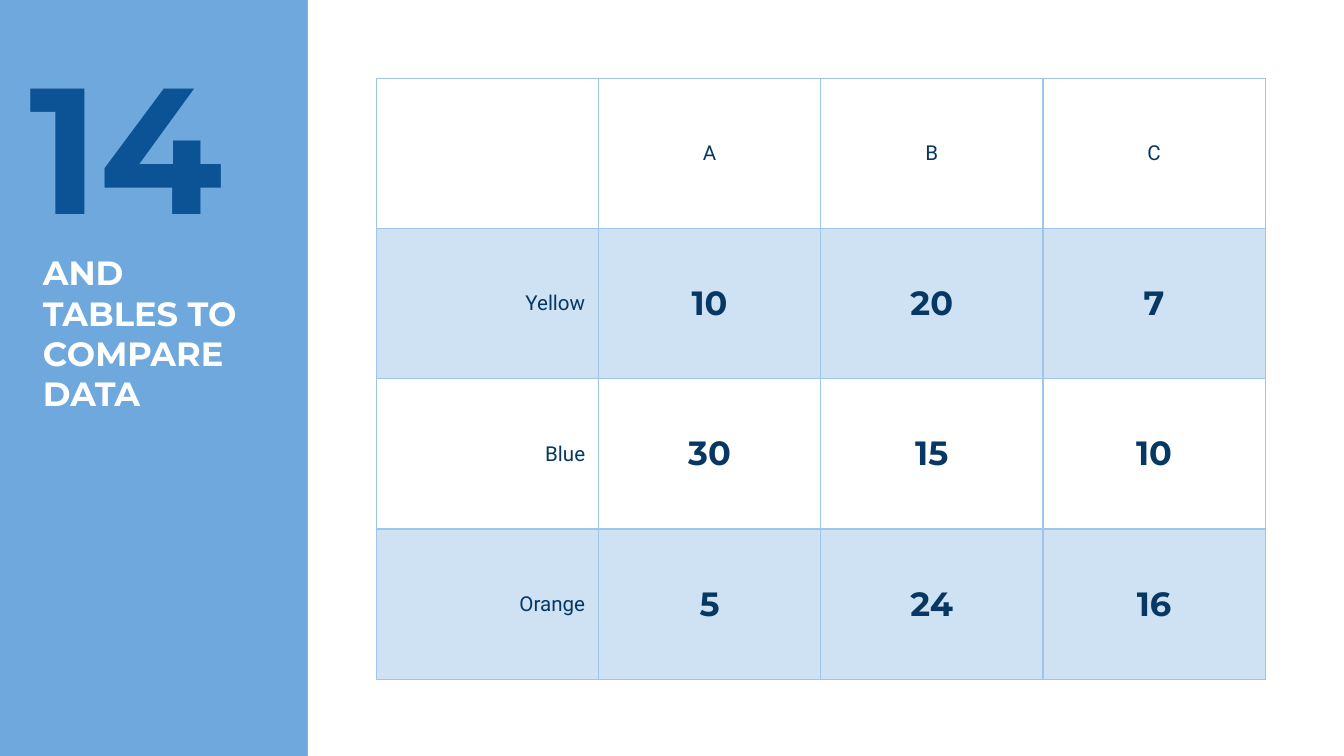
"""Build a slide with a sidebar heading and a table that compares data."""
from lxml.etree import SubElement
from pptx import Presentation
from pptx.dml.color import RGBColor
from pptx.enum.shapes import MSO_SHAPE as Shape
from pptx.enum.text import MSO_ANCHOR as Anchor, MSO_AUTO_SIZE as AutoSize, PP_ALIGN as Align
from pptx.oxml.ns import qn
from pptx.util import Cm, Pt

SKY = RGBColor(0x6F, 0xA8, 0xDC)
WHITE = RGBColor(0xFF, 0xFF, 0xFF)
NAVY = RGBColor(0x07, 0x37, 0x63)
COBALT = RGBColor(0x0B, 0x53, 0x94)
PALE = RGBColor(0xCF, 0xE2, 0xF3)
BORDER = RGBColor(0x9F, 0xC5, 0xE8)

COMPARISON = [
    ["", "A", "B", "C"],
    ["Yellow", "10", "20", "7"],
    ["Blue", "30", "15", "10"],
    ["Orange", "5", "24", "16"],
]


def write_text(frame, text, *, font="Montserrat", size=18, color=NAVY, bold=True, align=Align.LEFT):
    paragraph = frame.paragraphs[0]
    paragraph.alignment = align
    paragraph.line_spacing = 1.0
    run = paragraph.add_run()
    run.text = text
    run.font.name = font
    run.font.size = Pt(size)
    run.font.bold = bold
    run.font.color.rgb = color


class SlideBuilder:
    heading_font = "Montserrat"
    label_font = "Roboto"
    inset = Cm(0.25)
    cell_inset = Cm(0.18)
    border_width = Pt(0.75)

    def __init__(self, slide):
        self.slide = slide

    def background(self, color):
        fill = self.slide.background.fill
        fill.solid()
        fill.fore_color.rgb = color

    def panel(self, left, top, width, height, color):
        panel = self.slide.shapes.add_shape(Shape.RECTANGLE, left, top, width, height)
        panel.shadow.inherit = False
        panel.fill.solid()
        panel.fill.fore_color.rgb = color
        panel.line.fill.background()

    def frame(self, holder, text, **text_format):
        frame = holder.text_frame
        frame.word_wrap = True
        frame.auto_size = AutoSize.NONE
        frame.vertical_anchor = Anchor.TOP
        frame.margin_left = frame.margin_right = self.inset
        frame.margin_top = frame.margin_bottom = self.inset
        write_text(frame, text, font=self.heading_font, **text_format)

    def title(self, text, left, top, width, height, **text_format):
        title = self.slide.shapes.title
        title.left, title.top, title.width, title.height = left, top, width, height
        self.frame(title, text, **text_format)

    def big_number(self, text, left, top, width, height, **text_format):
        self.frame(self.slide.shapes.add_textbox(left, top, width, height), text, **text_format)

    def table(self, rows, left, top, column_width, row_height):
        row_count, column_count = len(rows), len(rows[0])
        table = self.slide.shapes.add_table(
            row_count, column_count, left, top,
            column_width * column_count, row_height * row_count).table
        table.first_row = table.horz_banding = False
        for column in table.columns:
            column.width = column_width
        for row_index, values in enumerate(rows):
            table.rows[row_index].height = row_height
            for column_index, value in enumerate(values):
                self.cell(table.cell(row_index, column_index), value, row_index, column_index)

    def cell(self, cell, value, row_index, column_index):
        cell.vertical_anchor = Anchor.MIDDLE
        cell.margin_left = cell.margin_right = self.inset
        cell.margin_top = cell.margin_bottom = self.cell_inset
        self.borders(cell)
        if row_index % 2:
            cell.fill.solid()
            cell.fill.fore_color.rgb = PALE
        else:
            cell.fill.background()
        if not value:
            return
        align = Align.CENTER if column_index else Align.RIGHT
        if row_index and column_index:
            write_text(cell.text_frame, value, font=self.heading_font, align=align)
        else:
            write_text(cell.text_frame, value, font=self.label_font, size=11, bold=False, align=align)

    def borders(self, cell):
        properties = cell._tc.get_or_add_tcPr()
        for side in ("a:lnL", "a:lnR", "a:lnT", "a:lnB"):
            line = SubElement(properties, qn(side), w=str(self.border_width))
            fill = SubElement(line, qn("a:solidFill"))
            SubElement(fill, qn("a:srgbClr"), val=str(BORDER))


def main():
    presentation = Presentation()
    presentation.slide_width = Cm(25.4)
    presentation.slide_height = Cm(14.29)
    title_only = presentation.slide_layouts[5]
    builder = SlideBuilder(presentation.slides.add_slide(title_only))
    builder.background(SKY)
    builder.panel(Cm(5.82), Cm(0), Cm(19.58), Cm(14.29), WHITE)
    builder.title("AND TABLES TO COMPARE DATA", Cm(0.56), Cm(4.52), Cm(4.75), Cm(2.39), color=WHITE)
    builder.table(COMPARISON, Cm(7.11), Cm(1.48), Cm(4.2), Cm(2.84))
    builder.big_number("14", Cm(0.3), Cm(0.41), Cm(5.03), Cm(3.48), size=96, color=COBALT)
    presentation.save("out.pptx")


if __name__ == "__main__":
    main()
